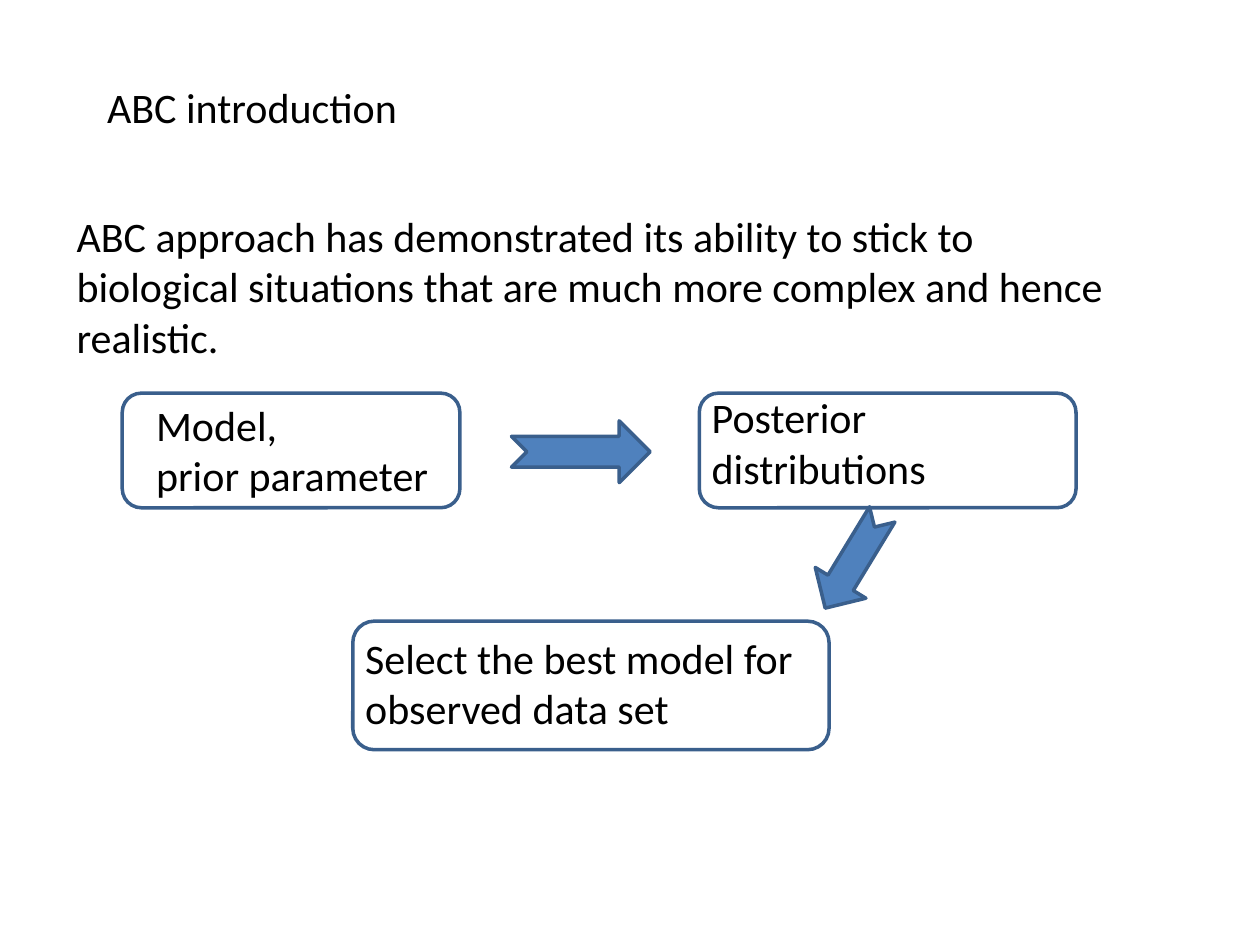
from pptx import Presentation
from pptx.dml.color import RGBColor
from pptx.enum.shapes import MSO_SHAPE
from pptx.enum.text import MSO_ANCHOR, MSO_AUTO_SIZE, PP_ALIGN
from pptx.util import Inches, Pt

ROUNDED = MSO_SHAPE.ROUNDED_RECTANGLE
ARROW = MSO_SHAPE.NOTCHED_RIGHT_ARROW
TOP = MSO_ANCHOR.TOP
LEFT = PP_ALIGN.LEFT
NO_AUTOFIT = MSO_AUTO_SIZE.NONE
COLORS = {"text": "000000", "fill": "4F81BD", "line": "3A5F8C"}


def rgb(name):
    return RGBColor.from_string(COLORS[name])


def write_text(sp, *lines, size=24, font="Calibri", color="text"):
    tf = sp.text_frame
    tf.word_wrap = True
    tf.auto_size = NO_AUTOFIT
    tf.vertical_anchor = TOP
    for i, line in enumerate(lines):
        p = tf.add_paragraph() if i else tf.paragraphs[0]
        p.alignment = LEFT
        r = p.add_run()
        r.text = line
        r.font.size = Pt(size)
        r.font.name = font
        r.font.color.rgb = rgb(color)


def add_title(s, text, x, y, w, h):
    sp = s.shapes.title
    sp.left, sp.top, sp.width, sp.height = map(Inches, (x, y, w, h))
    write_text(sp, text)


def add_text(s, x, y, w, h, *lines):
    sp = s.shapes.add_textbox(*map(Inches, (x, y, w, h)))
    write_text(sp, *lines)


def add_outlined(s, kind, x, y, w, h, fill=None, rotation=0):
    sp = s.shapes.add_shape(kind, *map(Inches, (x, y, w, h)))
    sp.shadow.inherit = False
    sp.rotation = rotation
    if fill:
        sp.fill.solid()
        sp.fill.fore_color.rgb = rgb(fill)
    else:
        sp.fill.background()
    sp.line.color.rgb = rgb("line")
    sp.line.width = Pt(2)


def main():
    prs = Presentation()
    prs.slide_width, prs.slide_height = Inches(10), Inches(7.5)
    s = prs.slides.add_slide(prs.slide_layouts[5])

    add_title(s, "ABC introduction", 0.75, 0.6, 5.98, 0.5)
    add_text(s, 0.51, 1.62, 8.43, 1.72,
             "ABC approach has demonstrated its ability to stick to biological "
             "situations that are much more complex and hence realistic.")

    add_outlined(s, ROUNDED, 0.97, 3.12, 2.68, 0.91)
    add_text(s, 1.14, 3.12, 3.31, 0.91, "Model,", "prior parameter")
    add_outlined(s, ROUNDED, 5.55, 3.12, 2.99, 0.91)
    add_text(s, 5.55, 3.06, 2.99, 0.91, "Posterior distributions")
    add_outlined(s, ROUNDED, 2.8, 4.93, 3.78, 1.02)
    add_text(s, 2.8, 4.97, 3.78, 0.91,
             "Select the best model for observed data set")

    add_outlined(s, ARROW, 4.06, 3.34, 1.1, 0.49, fill="fill")
    add_outlined(s, ARROW, 6.34, 4.22, 0.87, 0.47, fill="fill", rotation=121.3)

    prs.save("out.pptx")


if __name__ == "__main__":
    main()
